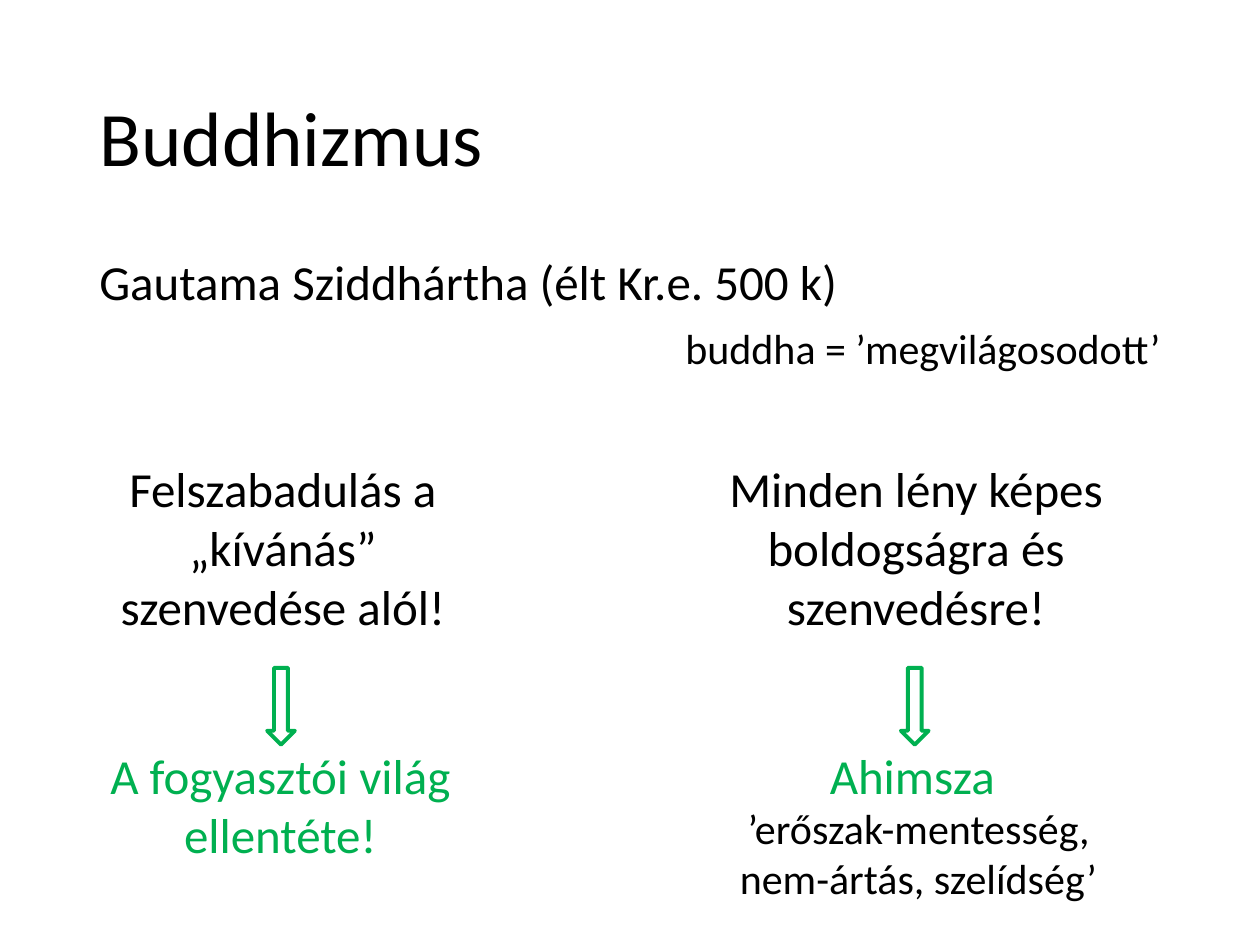
from pptx import Presentation
from pptx.dml.color import RGBColor
from pptx.enum.shapes import MSO_SHAPE
from pptx.enum.text import MSO_ANCHOR, PP_ALIGN
from pptx.util import Inches, Pt

BLACK, GREEN = "000000", "00B050"
LEFT, CENTER, RIGHT = PP_ALIGN.LEFT, PP_ALIGN.CENTER, PP_ALIGN.RIGHT

# Content: paragraphs are (text, size, alignment)
TITLE = [("Buddhizmus", 44, LEFT)]
INTRO = [
    ("Gautama Sziddhártha (élt Kr.e. 500 k)", 28, LEFT),
    ("buddha = ’megvilágosodott’", 24, RIGHT),
]
# Centred texts: (text, size, colour, left, top, width, height)
TEACHINGS = [
    ("Felszabadulás a „kívánás” szenvedése alól!", 28, BLACK, 0.71, 3.59, 3.07, 1.51),
    ("Minden lény képes boldogságra és szenvedésre!", 28, BLACK, 5.6, 3.59, 3.34, 1.51),
    ("A fogyasztói világ ellentéte!", 28, GREEN, 0.71, 5.87, 3.03, 1.04),
    ("Ahimsza", 28, GREEN, 6.43, 5.87, 1.62, 0.57),
    ("’erőszak-mentesség, nem-ártás, szelídség’", 24, BLACK, 5.57, 6.32, 3.44, 0.91),
]
ARROW_LEFTS = [2.12, 7.15]
ARROW_TOP, ARROW_W, ARROW_H = 5.3, 0.22, 0.61


def rgb(color):
    return RGBColor.from_string(color)


def add_text(s, box, paragraphs, color=BLACK, anchor=MSO_ANCHOR.TOP,
             line_spacing=1.0, space_before=0):
    tf = s.shapes.add_textbox(*map(Inches, box)).text_frame
    tf.word_wrap = True
    tf.vertical_anchor = anchor
    for i, (text, size, align) in enumerate(paragraphs):
        p = tf.add_paragraph() if i else tf.paragraphs[0]
        p.text = text
        p.alignment = align
        p.line_spacing = line_spacing
        p.space_before = Pt(space_before)
        p.font.name = "Calibri"
        p.font.size = Pt(size)
        p.font.color.rgb = rgb(color)


def add_down_arrow(s, left):
    sp = s.shapes.add_shape(MSO_SHAPE.DOWN_ARROW, Inches(left), Inches(ARROW_TOP),
                            Inches(ARROW_W), Inches(ARROW_H))
    sp.shadow.inherit = False
    sp.fill.background()
    sp.line.color.rgb = rgb(GREEN)
    sp.line.width = Pt(2.25)


prs = Presentation()
prs.slide_width, prs.slide_height = Inches(10), Inches(7.5)
s = prs.slides.add_slide(prs.slide_layouts[6])

# Title and introduction
add_text(s, (0.69, 0.4, 8.62, 1.45), TITLE, anchor=MSO_ANCHOR.MIDDLE, line_spacing=0.9)
add_text(s, (0.69, 2, 8.62, 4.76), INTRO, line_spacing=0.9, space_before=10)

# Teachings and their consequences
for text, size, color, *box in TEACHINGS:
    add_text(s, box, [(text, size, CENTER)], color)

# Arrows from teaching to consequence
for left in ARROW_LEFTS:
    add_down_arrow(s, left)

prs.save("out.pptx")
